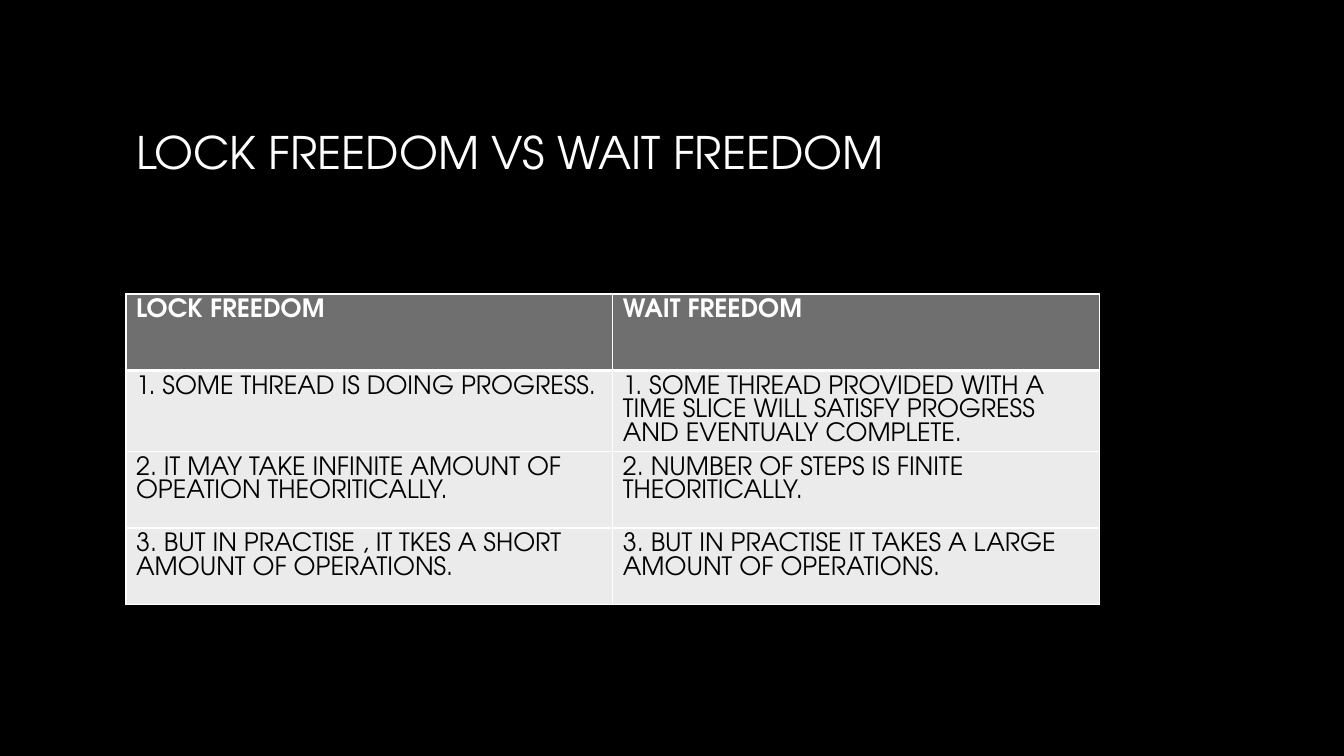
from pptx import Presentation
from pptx.dml.color import RGBColor
from pptx.enum.text import MSO_ANCHOR, MSO_AUTO_SIZE, PP_ALIGN
from pptx.oxml import parse_xml
from pptx.oxml.ns import nsdecls
from pptx.util import Inches, Pt

COMPARISON = [
    ("LOCK FREEDOM", "WAIT FREEDOM"),
    ("1. SOME THREAD IS DOING PROGRESS.",
     "1. SOME THREAD PROVIDED WITH A TIME SLICE WILL SATISFY PROGRESS AND EVENTUALY COMPLETE."),
    ("2. IT MAY TAKE INFINITE AMOUNT OF OPEATION THEORITICALLY.",
     "2. NUMBER OF STEPS IS FINITE THEORITICALLY."),
    ("3. BUT IN PRACTISE , IT TKES A SHORT AMOUNT OF OPERATIONS.",
     "3. BUT IN PRACTISE IT TAKES A LARGE AMOUNT OF OPERATIONS."),
]


def color(value):
    """Turn a hex string into a colour."""
    return RGBColor.from_string(value)


class SlideBuilder:
    """Hold the style and the current slide, placed on a 32 by 18 grid."""

    font = "TeX Gyre Adventor"
    white, black, header_gray, body_gray = "FFFFFF", "000000", "6F6F6F", "EBEBEB"

    def __init__(self, presentation):
        """Add a title slide with a black background."""
        self.column = presentation.slide_width / 32
        self.row = presentation.slide_height / 18
        self.slide = presentation.slides.add_slide(presentation.slide_layouts[5])
        fill = self.slide.background.fill
        fill.solid()
        fill.fore_color.rgb = color(self.black)

    def place(self, left, top, width, height):
        """Convert grid columns and rows to lengths."""
        return (round(left * self.column), round(top * self.row),
                round(width * self.column), round(height * self.row))

    def set_text(self, text_frame, text, size, text_color, bold=False):
        """Set the text of a frame and format its runs."""
        text_frame.text = text
        for paragraph in text_frame.paragraphs:
            paragraph.alignment = PP_ALIGN.LEFT
            for run in paragraph.runs:
                run.font.name = self.font
                run.font.size = Pt(size)
                run.font.bold = bold
                run.font.color.rgb = color(text_color)

    def title(self, text, *box):
        """Fill the title placeholder, raised by a deeper bottom margin."""
        shape = self.slide.shapes.title
        shape.left, shape.top, shape.width, shape.height = self.place(*box)
        frame = shape.text_frame
        self.set_text(frame, text, 32, self.white)
        frame.word_wrap = True
        frame.auto_size = MSO_AUTO_SIZE.NONE
        frame.vertical_anchor = MSO_ANCHOR.MIDDLE
        frame.margin_bottom = Inches(0.46)

    def borders(self, cell, widths):
        """Draw white cell borders from widths in points by side."""
        properties = cell._tc.get_or_add_tcPr()
        for position, (side, width) in enumerate(widths.items()):
            properties.insert(position, parse_xml(
                f'<a:ln{side} {nsdecls("a")} w="{Pt(width)}"><a:solidFill>'
                f'<a:srgbClr val="{self.white}"/></a:solidFill></a:ln{side}>'))

    def table(self, rows, *box):
        """Add a table with a dark header row and equal columns."""
        shape = self.slide.shapes.add_table(len(rows), len(rows[0]), *self.place(*box))
        for row_index, texts in enumerate(rows):
            header = row_index == 0
            for column_index, text in enumerate(texts):
                cell = shape.table.cell(row_index, column_index)
                cell.fill.solid()
                cell.fill.fore_color.rgb = color(self.header_gray if header else self.body_gray)
                self.set_text(cell.text_frame, text, 18,
                              self.white if header else self.black, header)
                self.borders(cell, {"L": 1, "R": 1, "T": 3 if row_index == 1 else 1,
                                    "B": 3 if header else 1})


def main():
    """Build and save the slide."""
    presentation = Presentation()
    presentation.slide_width, presentation.slide_height = Inches(13.33), Inches(7.5)
    builder = SlideBuilder(presentation)
    builder.title("LOCK FREEDOM VS WAIT FREEDOM", 3, 1.6, 26, 5)
    builder.table(COMPARISON, 3, 7, 23.18, 7.3)
    presentation.save("out.pptx")


if __name__ == "__main__":
    main()
